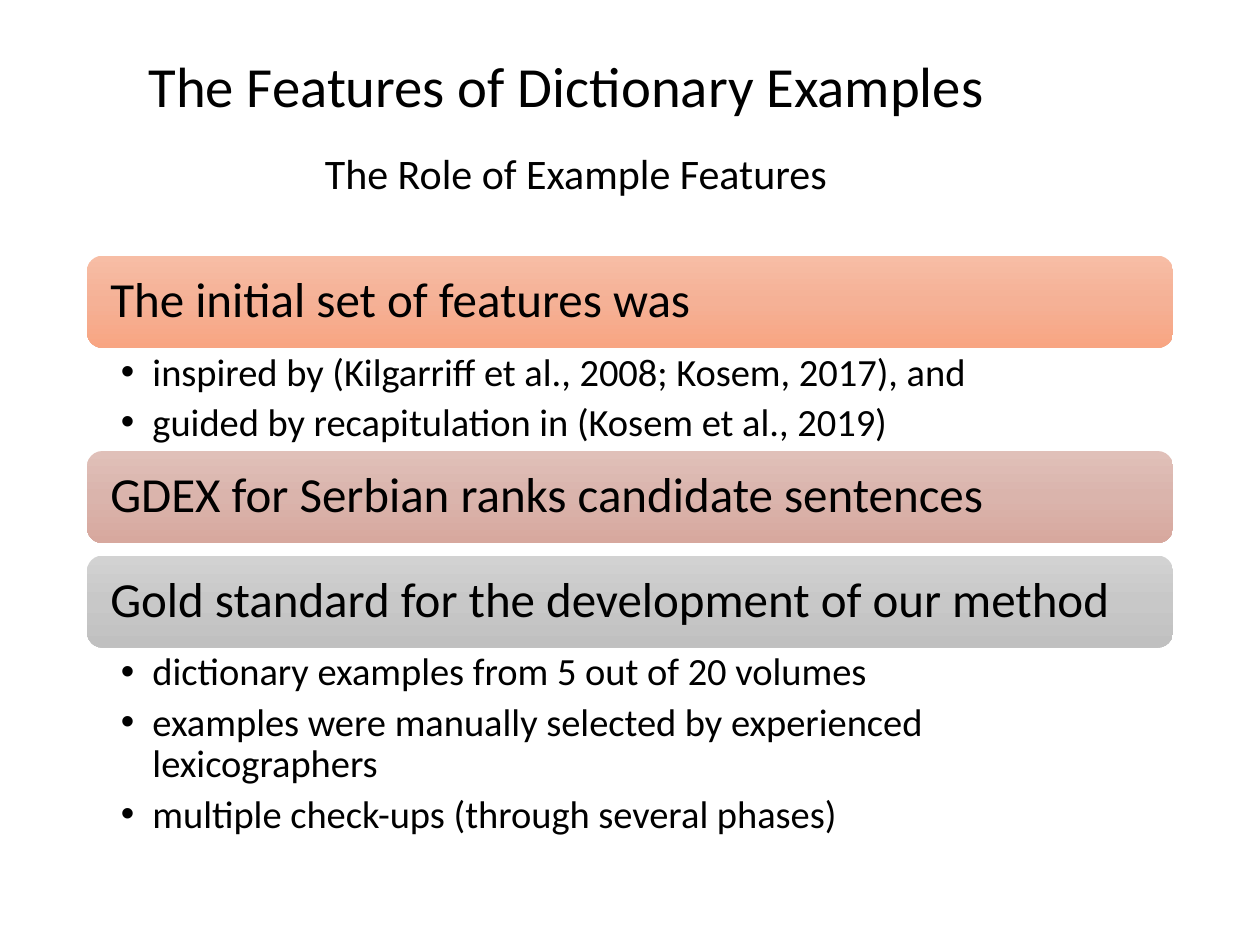
from copy import deepcopy

from lxml import etree
from pptx import Presentation
from pptx.dml.color import RGBColor
from pptx.enum.shapes import MSO_SHAPE
from pptx.enum.text import MSO_ANCHOR, MSO_AUTO_SIZE, PP_ALIGN
from pptx.oxml.ns import qn
from pptx.util import Inches, Pt

ROUND = MSO_SHAPE.ROUNDED_RECTANGLE
MIDDLE, TOP = MSO_ANCHOR.MIDDLE, MSO_ANCHOR.TOP
LEFT = PP_ALIGN.LEFT
FIT, FIXED = MSO_AUTO_SIZE.SHAPE_TO_FIT_TEXT, MSO_AUTO_SIZE.NONE

EDGE, WIDTH, BAR = 0.69, 8.62, 0.73
START, GAP = 2.03, 0.1

# Bar text, gradient colours, bullets, height of the bullet block
TOPICS = [
    ("The initial set of features was", ("F7BDA5", "F5B196", "F8A582"),
     ["inspired by (Kilgarriff et al., 2008; Kosem, 2017), and",
      "guided by recapitulation in (Kosem et al., 2019)"], 0.82),
    ("GDEX for Serbian ranks candidate sentences",
     ("E0C0B9", "DAB4AC", "D7A89E"), [], GAP),
    ("Gold standard for the development of our method",
     ("D2D2D2", "C8C8C8", "C0C0C0"),
     ["dictionary examples from 5 out of 20 volumes",
      "examples were manually selected by experienced lexicographers",
      "multiple check-ups (through several phases)"], 1.58),
]


def color(code):
    return RGBColor.from_string(code)


class Deck:
    def __init__(self, font, ink):
        self.font, self.ink = font, ink
        self.prs = Presentation()
        self.prs.slide_width, self.prs.slide_height = Inches(10), Inches(7.5)
        self.slide = self.prs.slides.add_slide(self.prs.slide_layouts[5])

    def frame(self, shape, anchor, insets):
        """Set up the text frame of a shape; insets run left, top, right, bottom."""
        frame = shape.text_frame
        frame.word_wrap, frame.auto_size = True, FIXED
        frame.vertical_anchor = anchor
        (frame.margin_left, frame.margin_top,
         frame.margin_right, frame.margin_bottom) = map(Inches, insets)
        return frame

    def add_text(self, para, text, size, spacing=0.9):
        para.alignment, para.line_spacing = LEFT, spacing
        run = para.add_run()
        run.text = text
        run.font.name, run.font.size = self.font, Pt(size)
        run.font.color.rgb = color(self.ink)
        return run

    def title(self, text, box, size):
        shape = self.slide.shapes.title
        shape.left, shape.top, shape.width, shape.height = map(Inches, box)
        frame = self.frame(shape, MIDDLE, (0.1, 0.05, 0.1, 0.05))
        self.add_text(frame.paragraphs[0], text, size)

    def label(self, text, box, size):
        """Add a one-line text with a soft shadow under its letters."""
        shape = self.slide.shapes.add_textbox(*map(Inches, box))
        frame = shape.text_frame
        frame.word_wrap, frame.auto_size = False, FIT
        run = self.add_text(frame.paragraphs[0], text, size, 1.0)
        effects = etree.Element(qn("a:effectLst"))
        shade = etree.SubElement(effects, qn("a:outerShdw"), blurRad="38100",
                                 dist="38100", dir="2700000", algn="tl")
        black = etree.SubElement(shade, qn("a:srgbClr"), val="000000")
        etree.SubElement(black, qn("a:alpha"), val="43000")
        run._r.rPr.find(qn("a:solidFill")).addnext(effects)

    def bar(self, text, box, shades, size):
        shape = self.slide.shapes.add_shape(ROUND, *map(Inches, box))
        shape.shadow.inherit = False
        shape.line.fill.background()
        shape.fill.gradient()
        shape.fill.gradient_angle = 270
        stops = shape._element.spPr.find(".//" + qn("a:gsLst"))
        stops.append(deepcopy(stops[0]))
        for i, stop in enumerate(shape.fill.gradient_stops):
            stop.position = i / 2
            stop.color.rgb = color(shades[i])
        frame = self.frame(shape, MIDDLE, (0.15, 0.12, 0.15, 0.12))
        self.add_text(frame.paragraphs[0], text, size)

    def bullets(self, items, box, size):
        shape = self.slide.shapes.add_textbox(*map(Inches, box))
        frame = self.frame(shape, TOP, (0.27, 0.04, 0.22, 0.04))
        for i, item in enumerate(items):
            para = frame.add_paragraph() if i else frame.paragraphs[0]
            props = para._p.get_or_add_pPr()
            props.set("marL", str(Inches(0.25)))
            props.set("indent", str(-Inches(0.25)))
            etree.SubElement(props, qn("a:buFont"), typeface="Arial")
            etree.SubElement(props, qn("a:buChar"), char="•")
            para.level, para.space_after = 1, Pt(5)
            self.add_text(para, item, size)


def main():
    deck = Deck("Calibri", "000000")
    deck.title("The Features of Dictionary Examples", (1.08, 0.4, 8.23, 0.62), 32.4)
    top = START
    for text, shades, items, depth in TOPICS:
        deck.bar(text, (EDGE, top, WIDTH, BAR), shades, 28)
        top += BAR
        if items:
            deck.bullets(items, (EDGE, top, WIDTH, depth), 22)
        top += depth
    deck.label("The Role of Example Features", (2.48, 1.12, 4.23, 0.5), 24)
    deck.prs.save("out.pptx")


if __name__ == "__main__":
    main()
